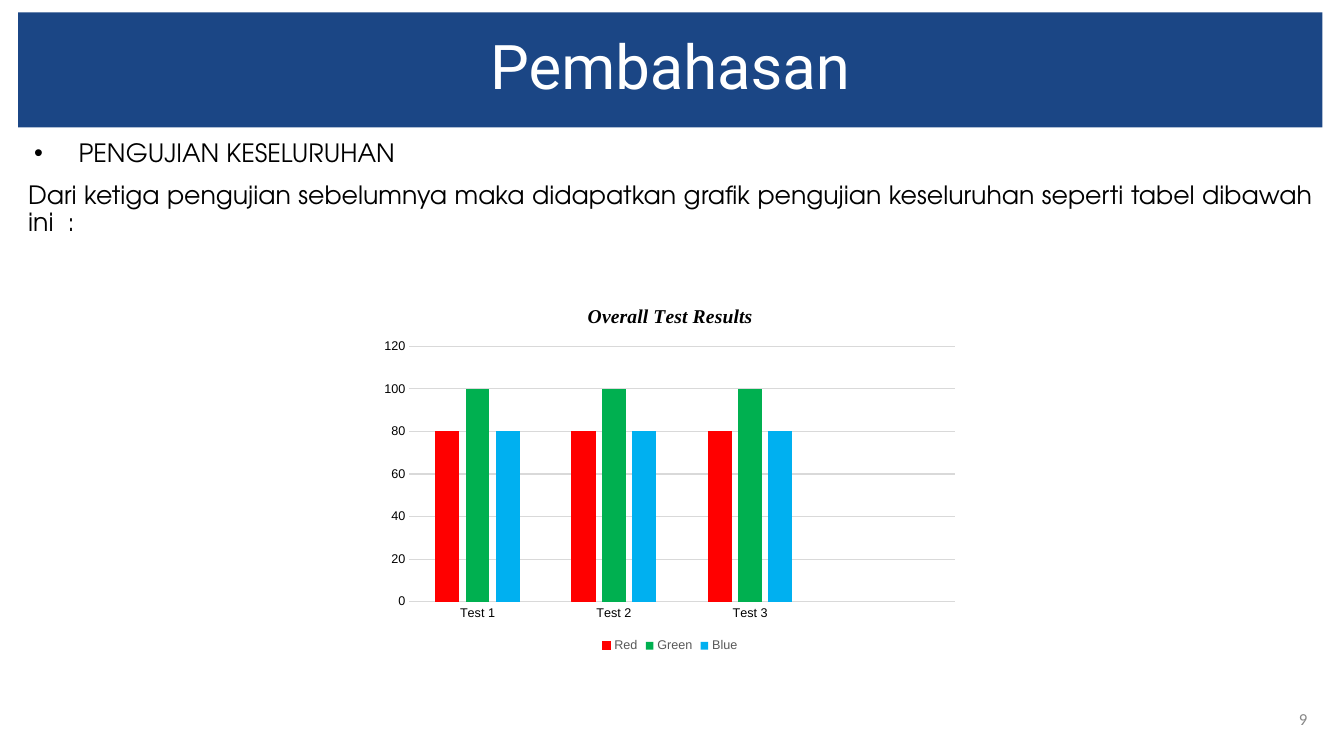
from lxml import etree
from pptx import Presentation
from pptx.chart.data import CategoryChartData
from pptx.dml.color import RGBColor
from pptx.enum.chart import XL_CHART_TYPE, XL_LEGEND_POSITION, XL_TICK_MARK
from pptx.enum.shapes import MSO_SHAPE
from pptx.enum.text import MSO_ANCHOR, PP_ALIGN
from pptx.oxml import parse_xml
from pptx.oxml.ns import nsdecls, qn
from pptx.util import Cm, Pt

LEFT, RIGHT, CENTER, JUSTIFY = PP_ALIGN.LEFT, PP_ALIGN.RIGHT, PP_ALIGN.CENTER, PP_ALIGN.JUSTIFY
TOP, MIDDLE = MSO_ANCHOR.TOP, MSO_ANCHOR.MIDDLE
NO_TICK = XL_TICK_MARK.NONE

NAVY = RGBColor(0x1B, 0x46, 0x85)
WHITE = RGBColor(0xFF, 0xFF, 0xFF)
BLACK = RGBColor(0, 0, 0)
GRAY = RGBColor(0x88, 0x88, 0x88)
DARK_GRAY = RGBColor(0x59, 0x59, 0x59)
GRID_GRAY = RGBColor(0xD9, 0xD9, 0xD9)
RED = RGBColor(0xFF, 0, 0)
GREEN = RGBColor(0, 0xB0, 0x50)
BLUE = RGBColor(0, 0xB0, 0xF0)

TITLE = "Pembahasan"
TOPIC = "PENGUJIAN KESELURUHAN"
INTRO = ("Dari ketiga pengujian sebelumnya maka didapatkan grafik pengujian "
         "keseluruhan seperti tabel dibawah ini  :")
PAGE = "9"
CHART_TITLE = "Overall Test Results"
TESTS = ["Test 1", "Test 2", "Test 3", ""]
RESULTS = [
    ("Red", (80, 80, 80, None), RED),
    ("Green", (100, 100, 100, None), GREEN),
    ("Blue", (80, 80, 80, None), BLUE),
]
PLOT_LAYOUT = {"x": 0.06, "y": 0.16, "w": 0.92, "h": 0.69}

MARGIN, CONTENT_W = Cm(0.46), Cm(32.87)


def set_font(font, name, size, color, **style):
    font.name, font.size = name, Pt(size)
    font.color.rgb = color
    for key, value in style.items():
        setattr(font, key, value)


def write(p, text, font, size, color, align=LEFT, spacing=None, before=None, bullet=False):
    if bullet:
        pPr = p._p.get_or_add_pPr()
        pPr.set("marL", str(Cm(1.27)))
        pPr.set("indent", str(Cm(-1.12)))
        etree.SubElement(pPr, qn("a:buFont")).set("typeface", "Arial")
        etree.SubElement(pPr, qn("a:buChar")).set("char", "•")
    p.alignment = align
    if spacing:
        p.line_spacing = spacing
    if before:
        p.space_before = Pt(before)
    r = p.add_run()
    r.text = text
    set_font(r.font, font, size, color)


def frame(sp, anchor):
    tf = sp.text_frame
    tf.word_wrap = True
    tf.vertical_anchor = anchor
    return tf


def add_results_chart(shapes):
    data = CategoryChartData()
    data.categories = TESTS
    for name, values, _ in RESULTS:
        data.add_series(name, values)
    chart = shapes.add_chart(XL_CHART_TYPE.COLUMN_CLUSTERED, Cm(9.42), Cm(7.24),
                             Cm(14.94), Cm(9.32), data).chart
    set_font(chart.font, "Arial", 10, BLACK)

    p = chart.chart_title.text_frame.paragraphs[0]
    r = p.add_run()
    r.text = CHART_TITLE
    set_font(r.font, "Times New Roman", 14, BLACK, bold=True, italic=True)
    chart.chart_title.include_in_layout = False

    chart.has_legend = True
    chart.legend.position = XL_LEGEND_POSITION.BOTTOM
    chart.legend.include_in_layout = False
    set_font(chart.legend.font, "Arial", 9, DARK_GRAY)

    for axis in (chart.category_axis, chart.value_axis):
        axis.major_tick_mark = axis.minor_tick_mark = NO_TICK
        set_font(axis.tick_labels.font, "Arial", 9, BLACK)
    value_axis = chart.value_axis
    value_axis.minimum_scale, value_axis.maximum_scale = 0, 120
    value_axis.major_unit = 20
    value_axis.format.line.fill.background()
    for line in (chart.category_axis.format.line, value_axis.major_gridlines.format.line):
        line.color.rgb = GRID_GRAY
        line.width = Pt(0.75)

    plot = chart.plots[0]
    plot.gap_width, plot.overlap = 219, -27
    plot.vary_by_categories = False
    for series, (_, _, color) in zip(plot.series, RESULTS):
        series.format.fill.solid()
        series.format.fill.fore_color.rgb = color
    red = plot.series[0]
    red.format.line.color.rgb = RED
    red.format.line.width = Pt(0.75)
    first = red.points[0].format
    first.fill.solid()
    first.fill.fore_color.rgb = RED
    first.line.fill.background()

    plot_area = chart._chartSpace.chart.plotArea
    for old in plot_area.findall(qn("c:layout")):
        plot_area.remove(old)
    sizes = "".join(f'<c:{k} val="{v}"/>' for k, v in PLOT_LAYOUT.items())
    plot_area.insert(0, parse_xml(
        f'<c:layout {nsdecls("c")}><c:manualLayout><c:layoutTarget val="inner"/>'
        f'<c:xMode val="edge"/><c:yMode val="edge"/>{sizes}</c:manualLayout></c:layout>'))


prs = Presentation()
prs.slide_width, prs.slide_height = Cm(33.87), Cm(19.05)
shapes = prs.slides.add_slide(prs.slide_layouts[6]).shapes

banner = shapes.add_shape(MSO_SHAPE.RECTANGLE, MARGIN, Cm(0.31), CONTENT_W, Cm(2.9))
banner.shadow.inherit = False
banner.fill.solid()
banner.fill.fore_color.rgb = NAVY
banner.line.fill.background()
write(frame(banner, MIDDLE).paragraphs[0], TITLE, "Roboto", 44, WHITE, align=CENTER, spacing=0.9)

body = frame(shapes.add_textbox(MARGIN, Cm(3.43), CONTENT_W, Cm(3.2)), TOP)
body_style = dict(font="TeX Gyre Adventor", size=18, color=BLACK, align=JUSTIFY, spacing=0.9)
write(body.paragraphs[0], TOPIC, bullet=True, **body_style)
write(body.add_paragraph(), INTRO, before=10, **body_style)

add_results_chart(shapes)

number = frame(shapes.add_textbox(Cm(31.75), Cm(17.6), Cm(1.45), Cm(1.02)), MIDDLE)
write(number.paragraphs[0], PAGE, "Calibri", 12, GRAY, align=RIGHT)

prs.save("out.pptx")
